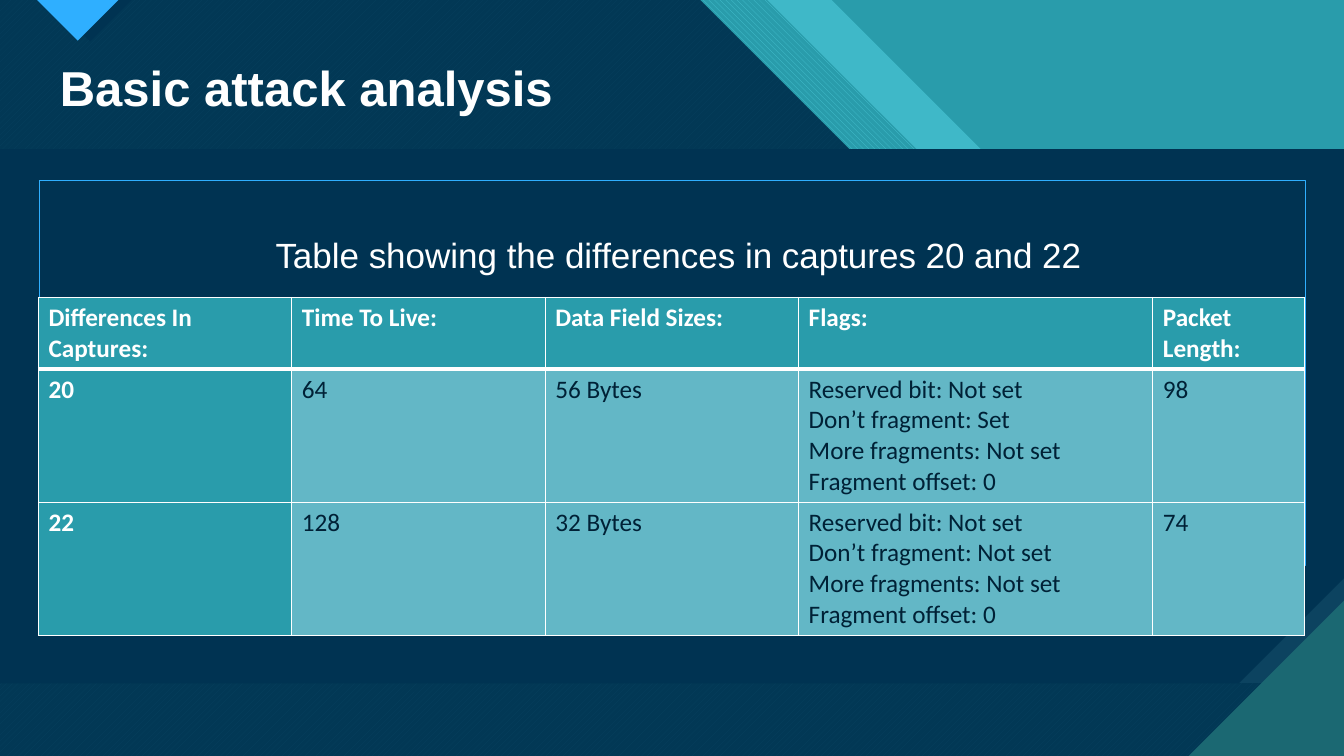
from dataclasses import dataclass
from lxml.etree import SubElement as Sub
from pptx import Presentation
from pptx.dml.color import RGBColor as Rgb
from pptx.enum.dml import MSO_PATTERN as Pat
from pptx.enum.text import MSO_ANCHOR as Anchor, MSO_AUTO_SIZE as Auto, PP_ALIGN as Align
from pptx.oxml.ns import qn
from pptx.util import Pt


@dataclass(frozen=True)
class Theme:
    navy: str = "003352"
    steel: str = "0C4360"
    teal: str = "299CAB"
    aqua: str = "47C3D3"
    pine: str = "1B6872"
    sky: str = "2FAFFF"
    pale: str = "63B7C6"
    ink: str = "002136"
    white: str = "FFFFFF"
    head: str = "Arial"
    text: str = "Calibri"
    big: int = 35
    mid: int = 25
    small: int = 18


T = Theme()
WIDE, HIGH = 960, 540
TOP, LOW, SNIP = 106.6, 488.2, 75.2
TITLE = "Basic attack analysis"
LEAD = "Table showing the differences in captures 20 and 22"
ROWS = [
    ["Differences In Captures:", "Time To Live:", "Data Field Sizes:", "Flags:", "Packet Length:"],
    ["20", "64", "56 Bytes",
     ["Reserved bit: Not set", "Don’t fragment: Set",
      "More fragments: Not set", "Fragment offset: 0"], "98"],
    ["22", "128", "32 Bytes",
     ["Reserved bit: Not set", "Don’t fragment: Not set",
      "More fragments: Not set", "Fragment offset: 0"], "74"],
]
COLS = [181, 181, 181, 253, 108.5]
TALL = [51, 95, 95]


def rgb(hue):
    return Rgb.from_string(hue)


def place(shape, x, y, w, h):
    shape.left, shape.top, shape.width, shape.height = Pt(x), Pt(y), Pt(w), Pt(h)


def write(para, text, face, size, hue, bold=False):
    run = para.add_run()
    run.text = text
    font = run.font
    font.name, font.size, font.bold = face, Pt(size), bold
    font.color.rgb = rgb(hue)


def draw(shapes, dots, hue, back=None, weave=None, alpha=None):
    dots = [(Pt(x), Pt(y)) for x, y in dots]
    pen = shapes.build_freeform(*dots[0], scale=1.0)
    pen.add_line_segments(dots[1:], close=True)
    shape = pen.convert_to_shape()
    shape.shadow.inherit = False
    shape.line.fill.background()
    fill = shape.fill
    if weave:
        fill.patterned()
        fill.pattern = weave
        fill.fore_color.rgb, fill.back_color.rgb = rgb(hue), rgb(back)
    else:
        fill.solid()
        fill.fore_color.rgb = rgb(hue)
    if alpha:
        tone = next(shape.element.spPr.iter(qn("a:srgbClr")))
        Sub(tone, qn("a:alpha"), val=str(alpha * 1000))


def slant(x):
    return [(0, 0), (x, 0), (x + TOP, TOP), (WIDE, TOP), (WIDE, HIGH), (0, HIGH)]


def wedge(x, w):
    return [(x, 0), (x + w, 0), (x + w / 2, w / 2)]


def decor(shapes):
    draw(shapes, slant(594), T.aqua, alpha=74)
    draw(shapes, slant(548), T.aqua, T.teal, Pat.WIDE_DOWNWARD_DIAGONAL)
    draw(shapes, slant(500), T.aqua, T.pine, Pat.WIDE_UPWARD_DIAGONAL)
    draw(shapes, slant(500), T.navy, alpha=90)
    draw(shapes, wedge(35, 59), T.navy)
    draw(shapes, wedge(26.5, 58), T.sky)
    band = [(0, TOP), (WIDE, TOP), (WIDE, LOW)]
    draw(shapes, band + [(0, LOW)], T.steel)
    draw(shapes, band[:2] + [(WIDE, LOW - SNIP), (WIDE - SNIP, LOW), (0, LOW)], T.navy)
    draw(shapes, [(849, HIGH), (WIDE, HIGH), (WIDE, HIGH - 111)], T.pine)


def head(title):
    place(title, 35.5, 42.5, 882.5, 45)
    frame = title.text_frame
    frame.auto_size, frame.vertical_anchor = Auto.NONE, Anchor.MIDDLE
    para = frame.paragraphs[0]
    para.alignment, para.line_spacing = Align.LEFT, 0.9
    write(para, TITLE, T.head, T.big, T.white, True)


def lead(body):
    place(body, 28, 129, 904.5, 275)
    body.line.color.rgb, body.line.width = rgb(T.sky), Pt(0.75)
    frame = body.text_frame
    frame.auto_size, frame.vertical_anchor = Auto.NONE, Anchor.TOP
    frame.margin_left = frame.margin_right = frame.margin_bottom = 0
    frame.margin_top = Pt(41)
    para = frame.paragraphs[0]
    props = para._p.get_or_add_pPr()
    props.set("marL", str(Pt(8.5)))
    props.set("indent", "0")
    Sub(props, qn("a:buNone"))
    para.alignment, para.line_spacing, para.space_before = Align.CENTER, 0.9, Pt(0)
    write(para, LEAD, T.head, T.mid, T.white)


def edge(cell, row):
    props = cell._tc.get_or_add_tcPr()
    thick = {"T": 3 if row == 1 else 1, "B": 3 if row == 0 else 1}
    for side in "LRTB":
        line = Sub(props, qn("a:ln" + side), w=str(Pt(thick.get(side, 1))))
        Sub(Sub(line, qn("a:solidFill")), qn("a:srgbClr"), val=T.white)


def grid(shapes):
    table = shapes.add_table(len(ROWS), len(COLS), Pt(27.5), Pt(212.4),
                             Pt(sum(COLS)), Pt(sum(TALL))).table
    for col, w in zip(table.columns, COLS):
        col.width = Pt(w)
    for row, h in zip(table.rows, TALL):
        row.height = Pt(h)
    for r, row in enumerate(ROWS):
        for c, item in enumerate(row):
            cell = table.cell(r, c)
            key = r == 0 or c == 0
            edge(cell, r)
            cell.fill.solid()
            cell.fill.fore_color.rgb = rgb(T.teal if key else T.pale)
            frame = cell.text_frame
            for i, text in enumerate(item if isinstance(item, list) else [item]):
                para = frame.add_paragraph() if i else frame.paragraphs[0]
                write(para, text, T.text, T.small, T.white if key else T.ink, key)


def main():
    deck = Presentation()
    deck.slide_width, deck.slide_height = Pt(WIDE), Pt(HIGH)
    slide = deck.slides.add_slide(deck.slide_layouts[1])
    slide.background.fill.solid()
    slide.background.fill.fore_color.rgb = rgb(T.teal)
    shapes = slide.shapes
    title, body = shapes.title, slide.placeholders[1]
    decor(shapes)
    for part in (title, body):
        shapes.element.append(part.element)
    head(title)
    lead(body)
    grid(shapes)
    deck.save("out.pptx")


if __name__ == "__main__":
    main()
